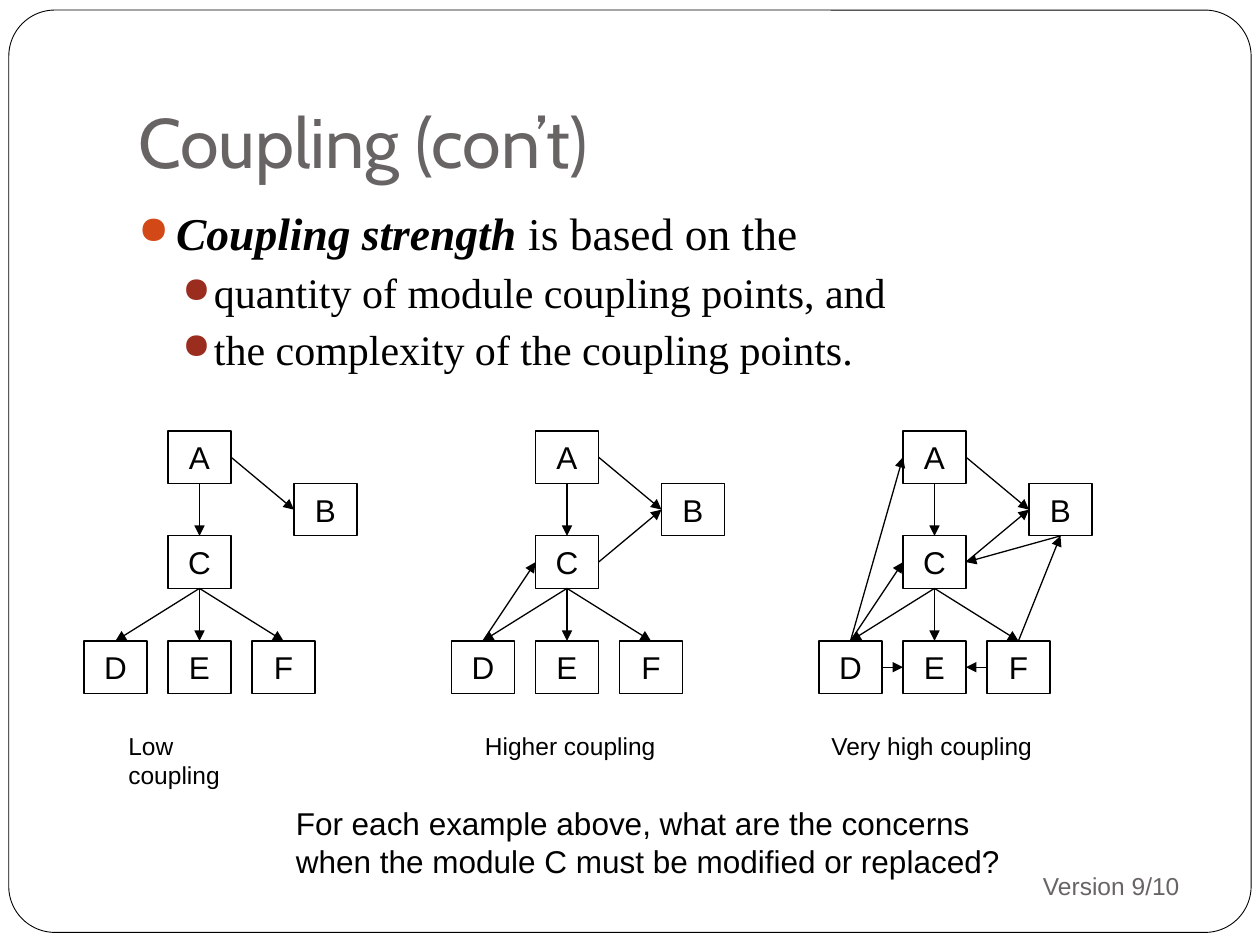
from lxml.etree import SubElement
from pptx import Presentation
from pptx.dml.color import RGBColor
from pptx.enum.shapes import MSO_CONNECTOR, MSO_SHAPE
from pptx.enum.text import MSO_ANCHOR, PP_ALIGN
from pptx.oxml.ns import qn
from pptx.util import Inches, Pt

BLACK = RGBColor(0x00, 0x00, 0x00)
WHITE = RGBColor(0xFF, 0xFF, 0xFF)
GREY = RGBColor(0x69, 0x64, 0x64)
ORANGE = RGBColor(0xD3, 0x48, 0x17)
RED = RGBColor(0x9B, 0x2D, 0x1F)

TOP, LEFT, BOTTOM, RIGHT = range(4)
BOX_W, BOX_H = 0.5, 5 / 12
MODULES = {
    "A": (2 / 3, 0),
    "B": (5 / 3, BOX_H),
    "C": (2 / 3, 2 * BOX_H),
    "D": (0, 4 * BOX_H),
    "E": (2 / 3, 4 * BOX_H),
    "F": (4 / 3, 4 * BOX_H),
}
LOW = [
    ("A", BOTTOM, "C", TOP),
    ("A", RIGHT, "B", LEFT),
    ("C", BOTTOM, "E", TOP),
    ("C", BOTTOM, "F", TOP),
    ("C", BOTTOM, "D", TOP),
]
HIGHER = LOW + [("C", RIGHT, "B", LEFT), ("D", TOP, "C", LEFT)]
VERY_HIGH = HIGHER + [
    ("F", TOP, "B", BOTTOM),
    ("D", RIGHT, "E", LEFT),
    ("D", TOP, "A", LEFT),
    ("F", LEFT, "E", RIGHT),
    ("B", BOTTOM, "C", RIGHT),
]


def add_run(p, text, size, font="Arial", color=BLACK, bold=False, italic=False):
    r = p.add_run()
    r.text = text
    r.font.size = Pt(size)
    r.font.name = font
    r.font.color.rgb = color
    r.font.bold = bold
    r.font.italic = italic


def add_text(s, box, text, size, align=PP_ALIGN.LEFT, anchor=MSO_ANCHOR.TOP,
             bottom=0.05, **fmt):
    tf = s.shapes.add_textbox(*map(Inches, box)).text_frame
    tf.word_wrap = True
    tf.vertical_anchor = anchor
    tf.margin_bottom = Inches(bottom)
    p = tf.paragraphs[0]
    p.alignment = align
    add_run(p, text, size, **fmt)


def add_rect(s, kind, box, width):
    sp = s.shapes.add_shape(kind, *map(Inches, box))
    sp.shadow.inherit = False
    sp.line.color.rgb = BLACK
    sp.line.width = Pt(width)
    return sp


def add_frame(s, box):
    sp = add_rect(s, MSO_SHAPE.ROUNDED_RECTANGLE, box, 0.5)
    sp.adjustments[0] = 0.05
    sp.fill.solid()
    sp.fill.fore_color.rgb = WHITE


def set_bullet(p, indent, hanging, color):
    pPr = p._p.get_or_add_pPr()
    pPr.set("marL", str(Inches(indent)))
    pPr.set("indent", str(-Inches(hanging)))
    clr = SubElement(pPr, qn("a:buClr"))
    SubElement(clr, qn("a:srgbClr"), val=str(color))
    SubElement(pPr, qn("a:buSzPct"), val="85000")
    SubElement(pPr, qn("a:buChar"), char="●")


def add_body(s, box):
    tf = s.shapes.add_textbox(*map(Inches, box)).text_frame
    tf.word_wrap = True
    p = tf.paragraphs[0]
    p.space_before = Pt(5.8)
    set_bullet(p, 0.3, 0.3, ORANGE)
    add_run(p, "Coupling strength", 26, "Times New Roman", bold=True, italic=True)
    add_run(p, " is based on the", 26, "Times New Roman")
    for text in ("quantity of module coupling points, and",
                 "the complexity of the coupling points."):
        p = tf.add_paragraph()
        p.level = 1
        p.space_before = Pt(3.7)
        set_bullet(p, 0.6, 0.25, RED)
        add_run(p, text, 24, "Times New Roman")


def add_module(s, box, name):
    sp = add_rect(s, MSO_SHAPE.RECTANGLE, box, 0.75)
    sp.fill.background()
    tf = sp.text_frame
    tf.word_wrap = False
    tf.vertical_anchor = MSO_ANCHOR.MIDDLE
    p = tf.paragraphs[0]
    p.alignment = PP_ALIGN.CENTER
    add_run(p, name, 18)
    return sp


def add_arrow(s, start, start_side, end, end_side):
    c = s.shapes.add_connector(MSO_CONNECTOR.STRAIGHT, 0, 0, 0, 0)
    c.begin_connect(start, start_side)
    c.end_connect(end, end_side)
    c.line.color.rgb = BLACK
    c.line.width = Pt(0.75)
    SubElement(c.line._get_or_add_ln(), qn("a:tailEnd"), type="triangle")
    SubElement(c._element.spPr, qn("a:effectLst"))


def add_diagram(s, left, top, links):
    boxes = {
        name: add_module(s, (left + x, top + y, BOX_W, BOX_H), name)
        for name, (x, y) in MODULES.items()
    }
    for start, start_side, end, end_side in links:
        add_arrow(s, boxes[start], start_side, boxes[end], end_side)


def main():
    prs = Presentation()
    prs.slide_width, prs.slide_height = Inches(10), Inches(7.5)
    s = prs.slides.add_slide(prs.slide_layouts[6])
    add_frame(s, (0.07, 0.08, 9.86, 7.32))
    add_text(s, (1, 0.3, 8.5, 1.25), "Coupling (con’t)", 40, font="Cabin",
             color=GREY, anchor=MSO_ANCHOR.BOTTOM, bottom=0.1)
    add_text(s, (6.75, 6.77, 2.71, 0.52), "Version 9/10", 14, color=GREY,
             align=PP_ALIGN.RIGHT, anchor=MSO_ANCHOR.MIDDLE)
    add_body(s, (1, 1.58, 8.5, 5))
    examples = [
        (LOW, "Low coupling", 0.92, 1.33),
        (HIGHER, "Higher coupling", 3.75, 1.58),
        (VERY_HIGH, "Very high coupling", 6.5, 1.83),
    ]
    for i, (links, label, left, width) in enumerate(examples):
        add_diagram(s, 2 / 3 + i * 35 / 12, 3.42, links)
        add_text(s, (left, 5.75, width, 0.33), label, 14)
    add_text(s, (2.25, 6.33, 5.83, 0.7),
             "For each example above, what are the concerns when the module C "
             "must be modified or replaced?", 18)
    prs.save("out.pptx")


if __name__ == "__main__":
    main()
